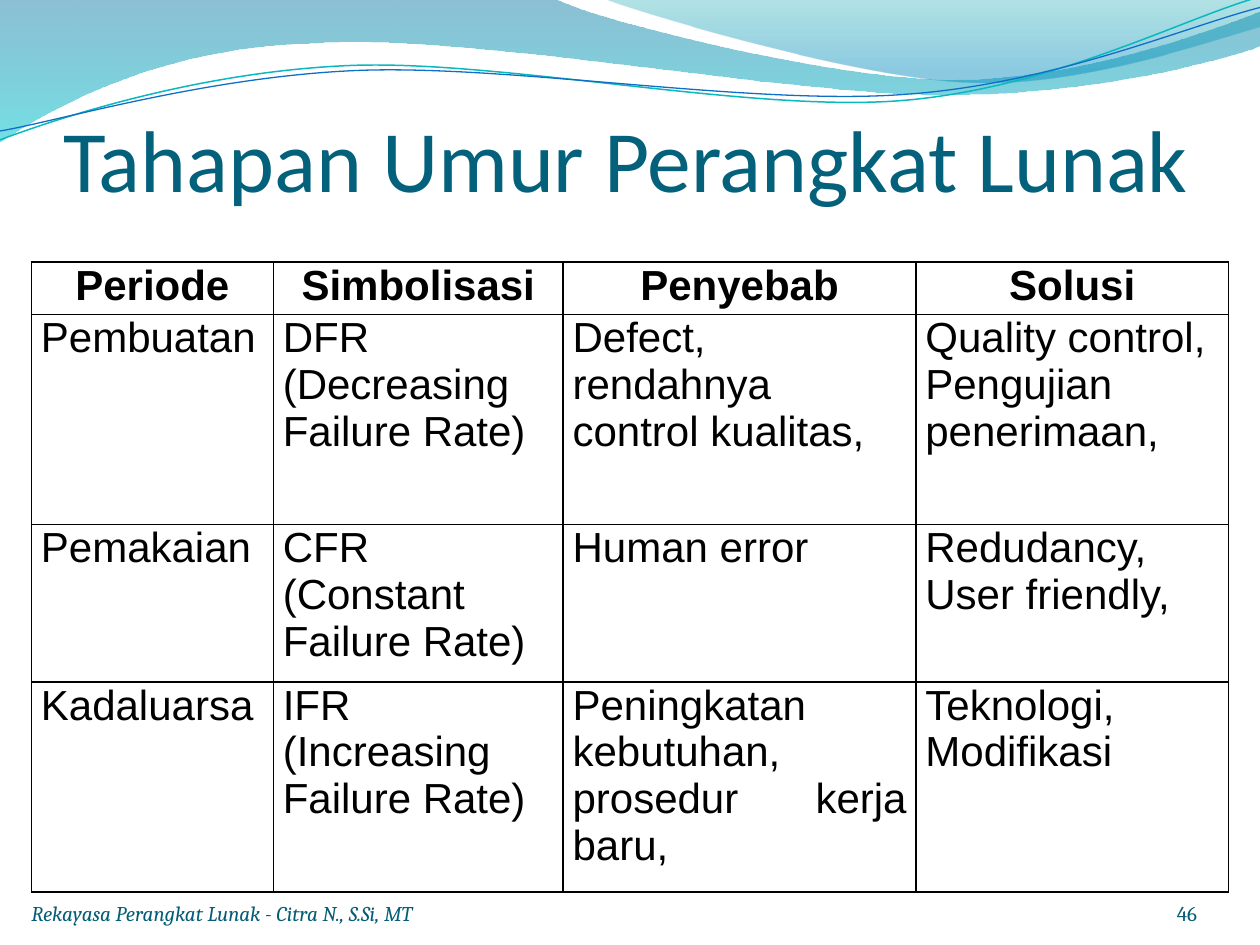
"""Build the slide on the life stages of software, with a wave header and a table."""
from dataclasses import dataclass
from math import cos, radians, sin
from typing import Optional

from lxml.etree import SubElement
from pptx import Presentation
from pptx.dml.color import RGBColor
from pptx.enum.text import MSO_ANCHOR as Anchor, MSO_AUTO_SIZE as AutoSize, PP_ALIGN as Align
from pptx.oxml import parse_xml
from pptx.oxml.ns import nsdecls, qn
from pptx.util import Inches, Pt

COLORS = {
    "title": "04617B", "footer": "045D75", "text": "000000", "border": "000000",
    "blue": "0074A1", "cyan": "00C6CF", "teal": "00A1A9", "sky": "008BBF",
    "teal_line": "0AB8BF", "blue_line": "0F6FC6",
}


@dataclass
class Stop:
    position: float
    color: str
    opacity: int


@dataclass
class Wave:
    """A path whose segments hold one point (line) or three points (curve)."""
    start: tuple
    segments: list
    stops: tuple = ()
    line_color: Optional[str] = None
    line_width: float = 0.75
    tilt: float = 0
    center: tuple = (0, 0)


@dataclass
class TextStyle:
    font: str
    size: float
    color: str
    bold: bool = False
    italic: bool = False
    align: Align = Align.LEFT


WAVES = [
    Wave((0, 0), [
        [(4.4, -0.01)],
        [(4.76, 0.17), (6.64, 0.63), (7.58, 0.63)],
        [(8.53, 0.63), (9.58, 0.26), (10, 0.09)],
        [(10.01, 0.36)],
        [(9.83, 0.44), (8.7, 0.76), (7.46, 0.75)],
        [(6.22, 0.75), (3.82, 0.28), (2.57, 0.34)],
        [(1.29, 0.36), (0.46, 0.83), (-0.01, 1.13)],
        [(0, 0)],
    ], (Stop(0, "blue", 45), Stop(1, "cyan", 55))),
    Wave((4.79, -0.01), [
        [(5.09, 0.11), (6.82, 0.62), (7.69, 0.65)],
        [(8.56, 0.69), (9.61, 0.32), (10, 0.21)],
        [(10, 0)],
        [(4.79, -0.01)],
    ], (Stop(0, "teal", 30), Stop(0.8, "sky", 45))),
    Wave((0, 1.11), [
        [(0.48, 0.93), (1.58, 0.57), (2.77, 0.52)],
        [(3.95, 0.47), (5.93, 0.89), (7.13, 0.8)],
        [(8.33, 0.71), (9.38, 0.15), (9.98, -0.02)],
    ], line_color="teal_line", line_width=0.85, tilt=-2.7, center=(4.99, 0.58)),
    Wave((0, 1.04), [
        [(0.47, 0.96), (1.64, 0.61), (2.83, 0.56)],
        [(4.03, 0.51), (5.97, 0.84), (7.17, 0.75)],
        [(8.36, 0.67), (9.41, 0.21), (10, 0.06)],
    ], line_color="blue_line", tilt=-2.7, center=(5, 0.59)),
]

COLUMN_WIDTHS = [1.92, 2.3, 2.8, 2.48]
ROW_UNIT = 5 / 12
ROW_UNITS = [1, 4, 3, 4]
ROWS = [
    ["Periode", "Simbolisasi", "Penyebab", "Solusi"],
    ["Pembuatan", "DFR\n(Decreasing Failure Rate)",
     "Defect,\nrendahnya control kualitas,",
     "Quality control,\nPengujian penerimaan,"],
    ["Pemakaian", "CFR\n(Constant Failure Rate)", "Human error",
     "Redudancy,\nUser friendly,"],
    ["Kadaluarsa", "IFR\n(Increasing Failure Rate)",
     "Peningkatan kebutuhan, prosedur kerja baru,", "Teknologi,\nModifikasi"],
]

TITLE_STYLE = TextStyle("Calibri", 50, "title")
HEADER_STYLE = TextStyle("Arial", 24, "text", bold=True, align=Align.CENTER)
BODY_STYLE = TextStyle("Arial", 24, "text", align=Align.JUSTIFY)
FOOTER_STYLE = TextStyle("Cambria", 12, "footer", italic=True)
NUMBER_STYLE = TextStyle("Cambria", 12, "footer", align=Align.RIGHT)


def rgb(name: str) -> RGBColor:
    """Return the named colour."""
    return RGBColor.from_string(COLORS[name])


def write_text(frame, text: str, style: TextStyle) -> None:
    """Write one paragraph for each line of text."""
    for index, line in enumerate(text.split("\n")):
        paragraph = frame.add_paragraph() if index else frame.paragraphs[0]
        paragraph.alignment = style.align
        run = paragraph.add_run()
        run.text = line
        font = run.font
        font.name, font.size = style.font, Pt(style.size)
        font.bold, font.italic = style.bold, style.italic
        font.color.rgb = rgb(style.color)


def set_frame(frame, top_margin: float = 0) -> None:
    """Anchor a text frame at the bottom and set its margins."""
    frame.word_wrap = True
    frame.auto_size = AutoSize.NONE
    frame.vertical_anchor = Anchor.BOTTOM
    frame.margin_left = frame.margin_right = frame.margin_bottom = 0
    frame.margin_top = Inches(top_margin)


def untilt(wave: Wave, point: tuple) -> tuple:
    """Return a point in EMU as it lies before the wave is rotated."""
    angle = radians(-wave.tilt)
    across, down = (value - middle for value, middle in zip(point, wave.center))
    return (Inches(wave.center[0] + across * cos(angle) - down * sin(angle)),
            Inches(wave.center[1] + across * sin(angle) + down * cos(angle)))


def bend(shape, segments: list) -> None:
    """Join the three line steps of each curved segment into one Bezier curve."""
    steps = iter(list(shape.element.iter(qn("a:lnTo"))))
    for segment in segments:
        lines = [next(steps) for _ in segment]
        if len(lines) == 3:
            curve = parse_xml(f'<a:cubicBezTo {nsdecls("a")}/>')
            lines[0].addprevious(curve)
            for line in lines:
                curve.append(line[0])
                line.getparent().remove(line)


def add_wave(slide, wave: Wave) -> None:
    """Draw a wave as a gradient area or as an open line."""
    builder = slide.shapes.build_freeform(*untilt(wave, wave.start))
    points = [untilt(wave, point) for segment in wave.segments for point in segment]
    builder.add_line_segments(points, close=bool(wave.stops))
    shape = builder.convert_to_shape()
    bend(shape, wave.segments)
    shape.rotation = wave.tilt
    shape.shadow.inherit = False
    if wave.line_color:
        shape.fill.background()
        shape.line.color.rgb = rgb(wave.line_color)
        shape.line.width = Pt(wave.line_width)
        return
    shape.line.fill.background()
    shape.fill.gradient()
    shape.fill.gradient_angle = 270
    for gradient_stop, stop in zip(shape.fill.gradient_stops, wave.stops):
        gradient_stop.position = stop.position
        gradient_stop.color.rgb = rgb(stop.color)
    for color, stop in zip(shape.element.iter(qn("a:srgbClr")), wave.stops):
        SubElement(color, qn("a:alpha")).set("val", str(stop.opacity * 1000))


def set_borders(cell) -> None:
    """Give a cell thin lines on all four sides."""
    properties = cell._tc.get_or_add_tcPr()
    for index, side in enumerate("LRTB"):
        properties.insert(index, parse_xml(
            f'<a:ln{side} {nsdecls("a")} w="{Pt(1)}"><a:solidFill>'
            f'<a:srgbClr val="{COLORS["border"]}"/></a:solidFill></a:ln{side}>'))


def add_stage_table(slide) -> None:
    """Add the table of life stages."""
    table = slide.shapes.add_table(
        len(ROWS), len(COLUMN_WIDTHS), Inches(0.25), Inches(2.08),
        Inches(sum(COLUMN_WIDTHS)), Inches(sum(ROW_UNITS) * ROW_UNIT)).table
    table.first_row = table.horz_banding = False
    for column, width in zip(table.columns, COLUMN_WIDTHS):
        column.width = Inches(width)
    for row, units, texts in zip(table.rows, ROW_UNITS, ROWS):
        row.height = Inches(units * ROW_UNIT)
        for cell, text in zip(row.cells, texts):
            cell.margin_left = cell.margin_right = Pt(5.4)
            cell.margin_top = cell.margin_bottom = 0
            cell.fill.background()
            set_borders(cell)
            write_text(cell.text_frame, text, HEADER_STYLE if texts is ROWS[0] else BODY_STYLE)


def add_footer(slide, text: str, left: float, width: float, style: TextStyle) -> None:
    """Add a text box on the footer line."""
    box = slide.shapes.add_textbox(Inches(left), Inches(6.95), Inches(width), Inches(0.4))
    set_frame(box.text_frame)
    write_text(box.text_frame, text, style)


def main() -> None:
    """Build and save the presentation."""
    presentation = Presentation()
    presentation.slide_width, presentation.slide_height = Inches(10), Inches(7.5)
    slide = presentation.slides.add_slide(presentation.slide_layouts[5])
    for wave in WAVES:
        add_wave(slide, wave)
    title = slide.shapes.title
    title.element.getparent().append(title.element)
    title.left, title.top = Inches(0.5), Inches(0.42)
    title.width, title.height = Inches(9), Inches(1.25)
    set_frame(title.text_frame, 0.05)
    write_text(title.text_frame, "Tahapan Umur Perangkat Lunak", TITLE_STYLE)
    add_stage_table(slide)
    add_footer(slide, "46", 8.67, 0.83, NUMBER_STYLE)
    add_footer(slide, "Rekayasa Perangkat Lunak - Citra N., S.Si, MT", 0.25, 3.67, FOOTER_STYLE)
    presentation.save("out.pptx")


if __name__ == "__main__":
    main()
